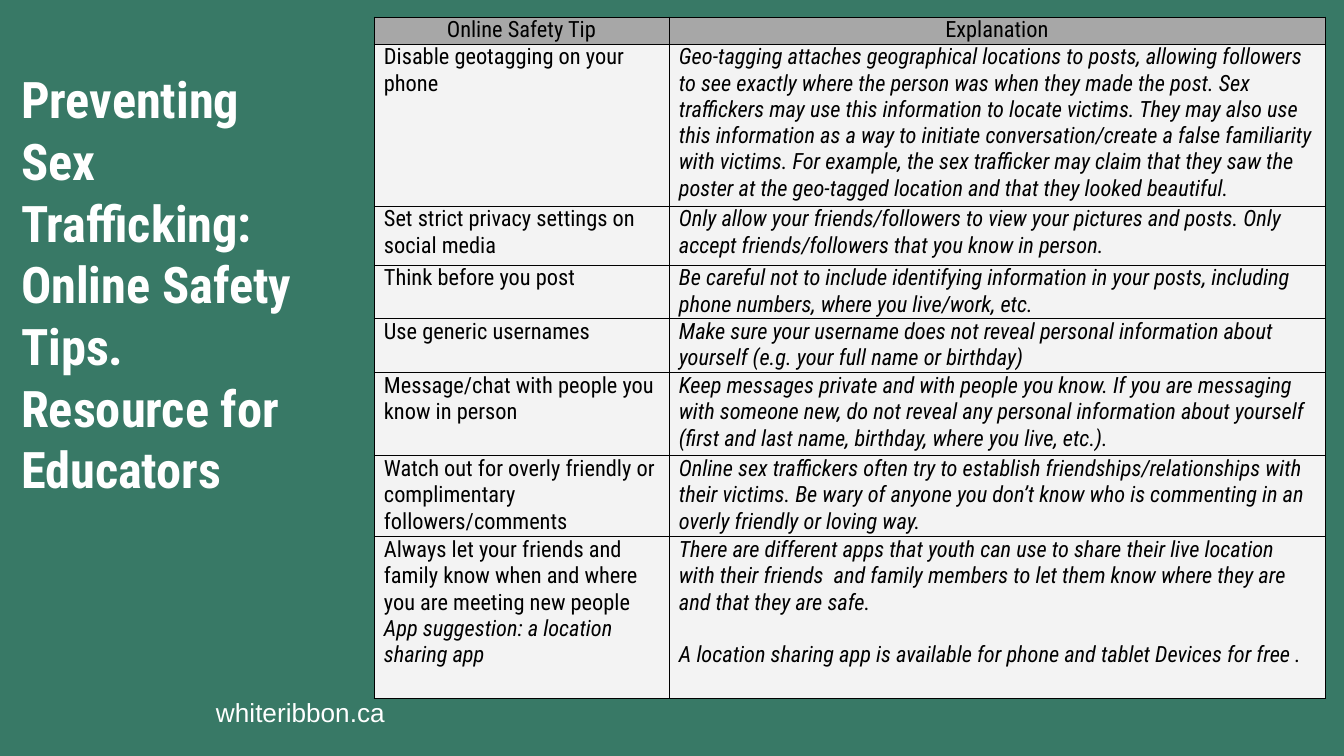
from lxml import etree
from pptx import Presentation
from pptx import util as u
from pptx.dml.color import RGBColor
from pptx.enum import text
from pptx.oxml.ns import qn

PX = 914400 / 134.4
FONT = "Roboto Condensed"
COLORS = {"green": "387966", "header": "A7A7A7", "body": "F3F3F3",
          "black": "000000", "white": "FFFFFF"}
COLUMN_WIDTHS = [295, 656]
ROW_HEIGHTS = [27, 162, 59, 54, 54, 83, 81, 162]
# Each line of a cell is a paragraph
TIPS = [
    ("Online Safety Tip", "Explanation"),
    ("Disable geotagging on your phone",
     "Geo-tagging attaches geographical locations to posts, allowing followers to see "
     "exactly where the person was when they made the post. Sex traffickers may use this "
     "information to locate victims. They may also use this information as a way to "
     "initiate conversation/create a false familiarity with victims. For example, the sex "
     "trafficker may claim that they saw the poster at the geo-tagged location and that "
     "they looked beautiful."),
    ("Set strict privacy settings on social media",
     "Only allow your friends/followers to view your pictures and posts. Only accept "
     "friends/followers that you know in person."),
    ("Think before you post",
     "Be careful not to include identifying information in your posts, including phone "
     "numbers, where you live/work, etc."),
    ("Use generic usernames",
     "Make sure your username does not reveal personal information about yourself "
     "(e.g. your full name or birthday)"),
    ("Message/chat with people you know in person",
     "Keep messages private and with people you know. If you are messaging with someone "
     "new, do not reveal any personal information about yourself (first and last name, "
     "birthday, where you live, etc.)."),
    ("Watch out for overly friendly or complimentary followers/comments",
     "Online sex traffickers often try to establish friendships/relationships with their "
     "victims. Be wary of anyone you don’t know who is commenting in an overly friendly "
     "or loving way."),
    ("Always let your friends and family know when and where you are meeting new people\n"
     "App suggestion: a location sharing app",
     "There are different apps that youth can use to share their live location with their "
     "friends  and family members to let them know where they are and that they are safe.\n"
     "A location sharing app is available for phone and tablet Devices for free ."),
]


def px(*lengths):
    """Turn pixel lengths into EMU."""
    return [u.Emu(round(length * PX)) for length in lengths]


def style_runs(paragraph, font, size, color, bold=False, italic=False):
    for run in paragraph.runs:
        run.font.name = font
        run.font.size = u.Pt(size)
        run.font.bold = bold
        run.font.italic = italic
        run.font.color.rgb = RGBColor.from_string(COLORS[color])


prs = Presentation()
prs.slide_width, prs.slide_height = px(1344, 756)
slide = prs.slides.add_slide(prs.slide_layouts[5])
slide.background.fill.solid()
slide.background.fill.fore_color.rgb = RGBColor.from_string(COLORS["green"])

# Title
title = slide.shapes.title
title.left, title.top, title.width, title.height = px(8, 235, 298, 96)
heading = title.text_frame
heading.text = "Preventing Sex Trafficking: Online Safety Tips. Resource for Educators"
heading.word_wrap = True
heading.auto_size = text.MSO_AUTO_SIZE.NONE
heading.vertical_anchor = text.MSO_ANCHOR.MIDDLE
heading.margin_left, heading.margin_right = px(13, 8)
heading.paragraphs[0].alignment = text.PP_ALIGN.LEFT
heading.paragraphs[0].line_spacing = 1.02
style_runs(heading.paragraphs[0], FONT, 27, "white", bold=True)

# Web address
website = slide.shapes.add_textbox(*px(203, 683, 206, 56)).text_frame
website.text = "whiteribbon.ca"
website.word_wrap = True
(website.margin_left, website.margin_top,
 website.margin_right, website.margin_bottom) = px(13, 13, 13, 13)
style_runs(website.paragraphs[0], "Arial", 14, "white")

# Safety tips
tips = slide.shapes.add_table(
    len(TIPS), 2, *px(374, 17, sum(COLUMN_WIDTHS), sum(ROW_HEIGHTS))).table
for column, width in zip(tips.columns, px(*COLUMN_WIDTHS)):
    column.width = width
for row, height in zip(tips.rows, px(*ROW_HEIGHTS)):
    row.height = height

for r, tip in enumerate(TIPS):
    for c, wording in enumerate(tip):
        cell = tips.cell(r, c)
        cell.text = wording
        (cell.margin_left, cell.margin_top,
         cell.margin_right, cell.margin_bottom) = px(10, 0, 10, 0)
        for i, paragraph in enumerate(cell.text_frame.paragraphs):
            paragraph.alignment = text.PP_ALIGN.LEFT if r else text.PP_ALIGN.CENTER
            if i and c:
                paragraph.space_before = u.Pt(14)
            style_runs(paragraph, FONT, 12, "black", italic=r > 0 and (c == 1 or i > 0))
        properties = cell._tc.get_or_add_tcPr()
        for side in ("a:lnL", "a:lnR", "a:lnT", "a:lnB"):
            border = etree.SubElement(properties, qn(side), w=str(u.Pt(0.5)))
            line_fill = etree.SubElement(border, qn("a:solidFill"))
            etree.SubElement(line_fill, qn("a:srgbClr"), val=COLORS["black"])
        cell.fill.solid()
        cell.fill.fore_color.rgb = RGBColor.from_string(COLORS["body" if r else "header"])

prs.save("out.pptx")
